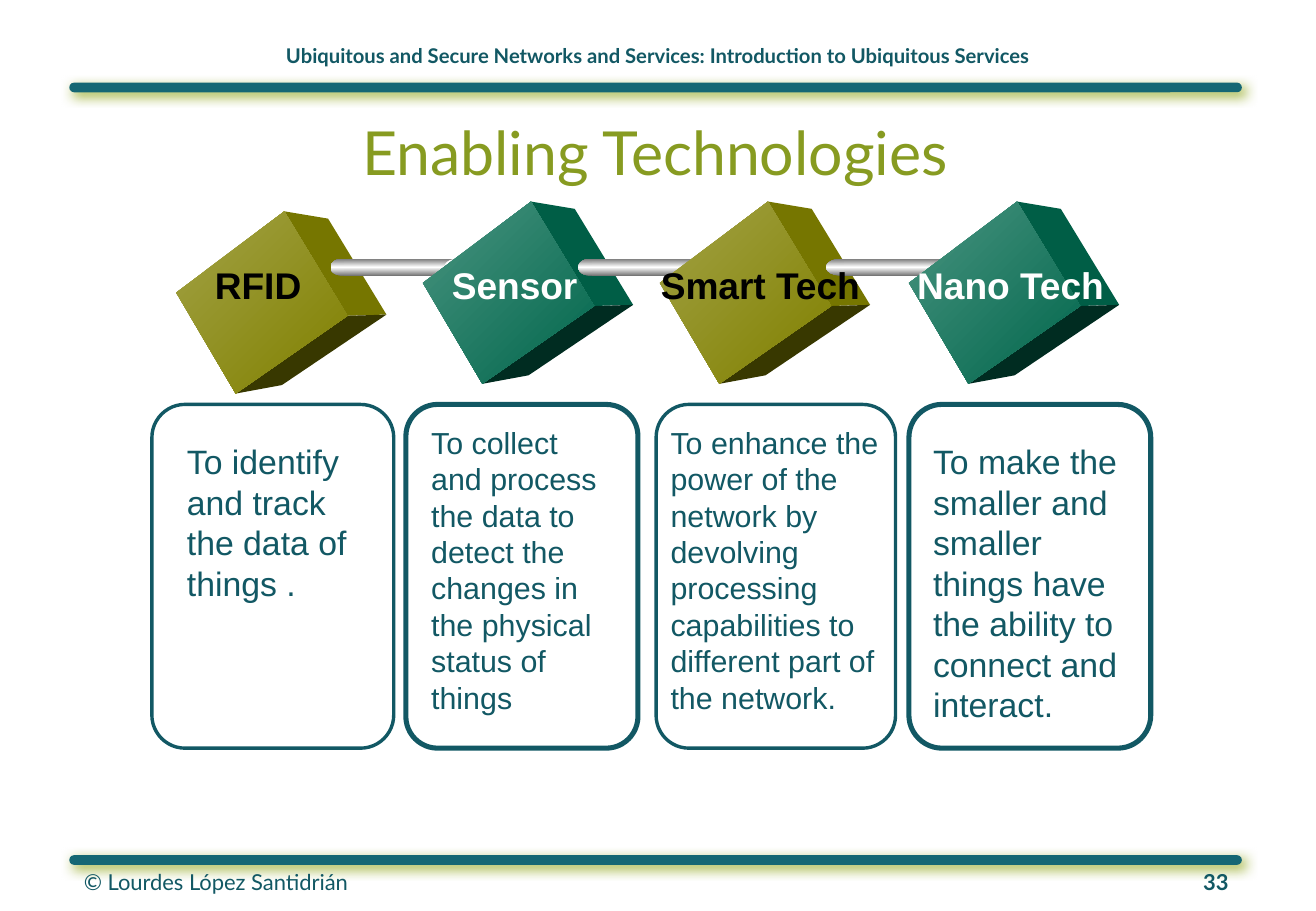
from copy import deepcopy

from lxml import etree
from pptx import Presentation
from pptx.dml.color import RGBColor
from pptx.enum.shapes import MSO_SHAPE as Shape
from pptx.enum.text import MSO_ANCHOR as Anchor, PP_ALIGN as Align
from pptx.oxml.ns import qn
from pptx.util import Inches, Pt

COLORS = {
    "text": "125864", "bar": "156774", "glow": "95AA24", "title": "879B21",
    "black": "000000", "white": "FFFFFF", "steel": "767676", "silver": "B6B6B6",
}
OLIVE = {"light": "A2A245", "front": "808000", "side": "767600", "base": "383800"}
GREEN = {"light": "4A9480", "front": "00664C", "side": "005E46", "base": "002C21"}
FACES = {
    "side": [(0.89, 0), (1.25, 0.06), (1.73, 0.85), (1.41, 0.86)],
    "base": [(0.49, 1.5), (1.41, 0.86), (1.73, 0.85), (0.87, 1.43)],
    "front": [(0, 0.67), (0.89, 0), (1.41, 0.86), (0.49, 1.5)],
}
STEEL = [COLORS["steel"], COLORS["white"], COLORS["steel"]]
SILVER = [COLORS["silver"], COLORS["white"], COLORS["silver"]]

TECHNOLOGIES = [
    {"label": "RFID", "label_box": (1.67, 2.11, 0.92, 0.47), "ink": "black",
     "cube": (1.45, 1.74), "palette": OLIVE, "rod": (2.72, 1),
     "panel": (1.25, 3.33, 1.99, 2.83), "border": 2, "size": 20,
     "text": "To identify and track the data of things .",
     "text_box": (1.44, 3.58, 1.53, 1.45)},
    {"label": "Sensor", "label_box": (3.62, 2.11, 1.25, 0.47), "ink": "white",
     "cube": (3.48, 1.66), "palette": GREEN, "rod": (4.76, 1),
     "panel": (3.34, 3.33, 1.91, 2.83), "border": 3, "size": 18,
     "text": "To collect and process the data to detect the changes in the "
             "physical status of things",
     "text_box": (3.45, 3.44, 1.72, 2.52)},
    {"label": "Smart Tech", "label_box": (5.34, 2.11, 1.86, 0.47), "ink": "black",
     "cube": (5.43, 1.66), "palette": OLIVE, "rod": (6.8, 1.3),
     "panel": (5.4, 3.33, 1.97, 2.83), "border": 2, "size": 18,
     "text": "To enhance the power of the network by devolving processing "
             "capabilities to different part of the network.",
     "text_box": (5.42, 3.44, 1.99, 2.52)},
    {"label": "Nano Tech", "label_box": (7.45, 2.11, 1.82, 0.47), "ink": "white",
     "cube": (7.48, 1.66), "palette": GREEN, "rod": None,
     "panel": (7.48, 3.33, 1.99, 2.83), "border": 3, "size": 20,
     "text": "To make the smaller and smaller things have the ability to "
             "connect and interact.",
     "text_box": (7.58, 3.58, 1.81, 2.46)},
]


def rgb(value):
    return RGBColor.from_string(value)


def lengths(box):
    return [Inches(value) for value in box]


def style_font(para, name, size, color, bold=False):
    para.font.name = name
    para.font.size = Pt(size)
    para.font.color.rgb = rgb(color)
    para.font.bold = bold


def add_shape(page, kind, box):
    shape = page.shapes.add_shape(kind, *lengths(box))
    shape.shadow.inherit = False
    shape.line.fill.background()
    return shape


def fill_gradient(shape, colors, angle):
    shape.fill.gradient()
    shape.fill.gradient_angle = angle
    stop_list = next(shape._element.spPr.iter(qn("a:gsLst")))
    for _ in colors[2:]:
        stop_list.append(deepcopy(stop_list[0]))
    for index, (stop, color) in enumerate(zip(shape.fill.gradient_stops, colors)):
        stop.color.rgb = rgb(color)
        stop.position = index / (len(colors) - 1)


def add_text(page, box, text, name, size, color, bold=False, wrap=True):
    shape = page.shapes.add_textbox(*lengths(box))
    shape.text_frame.word_wrap = wrap
    para = shape.text_frame.paragraphs[0]
    para.text = text
    style_font(para, name, size, color, bold)
    return shape.text_frame


def set_margins(frame, side, edge):
    frame.margin_left = frame.margin_right = Inches(side)
    frame.margin_top = frame.margin_bottom = Inches(edge)


def add_bar(page, box):
    bar = add_shape(page, Shape.ROUNDED_RECTANGLE, box)
    bar.adjustments[0] = 0.5
    bar.fill.solid()
    bar.fill.fore_color.rgb = rgb(COLORS["bar"])
    effects = bar._element.spPr.find(qn("a:effectLst"))
    shadow = etree.SubElement(
        effects, qn("a:outerShdw"), blurRad=str(Pt(7)), dist=str(Pt(3)),
        dir="2700000", algn="tl", rotWithShape="0")
    tint = etree.SubElement(shadow, qn("a:srgbClr"), val=COLORS["glow"])
    etree.SubElement(tint, qn("a:alpha"), val="90000")


def add_header(page, box):
    left, top, width, height = box
    frame = add_text(
        page, (left + 1.07, top, 7.55, 0.2),
        "Ubiquitous and Secure Networks and Services: "
        "Introduction to Ubiquitous Services", "Lato", 12, COLORS["text"], True)
    set_margins(frame, 0, 0)
    frame.vertical_anchor = Anchor.BOTTOM
    frame.paragraphs[0].alignment = Align.CENTER
    add_bar(page, (left, top + height - 0.08, width, 0.08))


def add_footer(page, box):
    left, top, width, height = box
    add_bar(page, (left, top, width, 0.08))
    shape = page.shapes.add_textbox(*lengths((left + 0.04, top + 0.07, 9.6, 0.3)))
    shape.text_frame.word_wrap = True
    set_margins(shape.text_frame, 0.08, 0.04)
    para = shape.text_frame.paragraphs[0]
    tabs = etree.SubElement(para._p.get_or_add_pPr(), qn("a:tabLst"))
    etree.SubElement(tabs, qn("a:tab"), pos=str(Inches(9.42)), algn="r")
    para.add_run().text = "© Lourdes López Santidrián\t"
    number = para.add_run()
    number.text = "33"
    number.font.bold = True
    style_font(para, "Lato", 13, COLORS["text"])


def add_title(page, box):
    title = page.shapes.title
    title.left, title.top, title.width, title.height = lengths(box)
    title.text_frame.vertical_anchor = Anchor.MIDDLE
    para = title.text_frame.paragraphs[0]
    para.text = "Enabling Technologies"
    para.alignment = Align.CENTER
    style_font(para, "Lato", 36, COLORS["title"])


def add_cube(page, corner, palette):
    left, top = corner
    for face, corners in FACES.items():
        points = [lengths((left + x, top + y)) for x, y in corners]
        builder = page.shapes.build_freeform(*points[0])
        builder.add_line_segments(points[1:], close=True)
        shape = builder.convert_to_shape()
        shape.shadow.inherit = False
        shape.line.fill.background()
        if face == "front":
            fill_gradient(shape, [palette["light"], palette["front"]], 315)
        else:
            shape.fill.solid()
            shape.fill.fore_color.rgb = rgb(palette[face])


def add_rod(page, left, top, stretch):
    parts = [
        (Shape.OVAL, 0, 0, 0.19, 0.14, STEEL),
        (Shape.RECTANGLE, 0.11, 0, 0.92, 0.14, STEEL),
        (Shape.OVAL, 0.94, 0.01, 0.17, 0.14, SILVER),
        (Shape.OVAL, 1.03, 0.05, 0.05, 0.04, SILVER),
    ]
    for index, (kind, x, y, width, height, colors) in enumerate(parts):
        part = add_shape(
            page, kind, (left + x * stretch, top + y, width * stretch, height))
        fill_gradient(part, colors, 90)
        if index == 2:
            part.line.color.rgb = rgb(COLORS["white"])
            part.line.width = Pt(1)


def add_panel(page, box, border):
    panel = add_shape(page, Shape.ROUNDED_RECTANGLE, box)
    panel.adjustments[0] = 0.137
    panel.fill.background()
    panel.line.color.rgb = rgb(COLORS["text"])
    panel.line.width = Pt(border)


def add_technologies(page):
    for item in TECHNOLOGIES:
        add_panel(page, item["panel"], item["border"])
        add_cube(page, item["cube"], item["palette"])
        if item["rod"]:
            left, stretch = item["rod"]
            add_rod(page, left, 2.13, stretch)
    for item in TECHNOLOGIES:
        add_text(page, item["label_box"], item["label"], "Arial", 22,
                 COLORS[item["ink"]], bold=True, wrap=False)
        add_text(page, item["text_box"], item["text"], "Arial", item["size"],
                 COLORS["text"])


def main():
    deck = Presentation()
    deck.slide_width, deck.slide_height = lengths((10.83, 7.5))
    page = deck.slides.add_slide(deck.slide_layouts[5])
    add_header(page, (0.57, 0.36, 9.65, 0.4))
    add_footer(page, (0.57, 7.04, 9.65, 0.37))
    add_title(page, (0.52, 0.85, 9.74, 0.79))
    add_technologies(page)
    deck.save("out.pptx")


if __name__ == "__main__":
    main()
